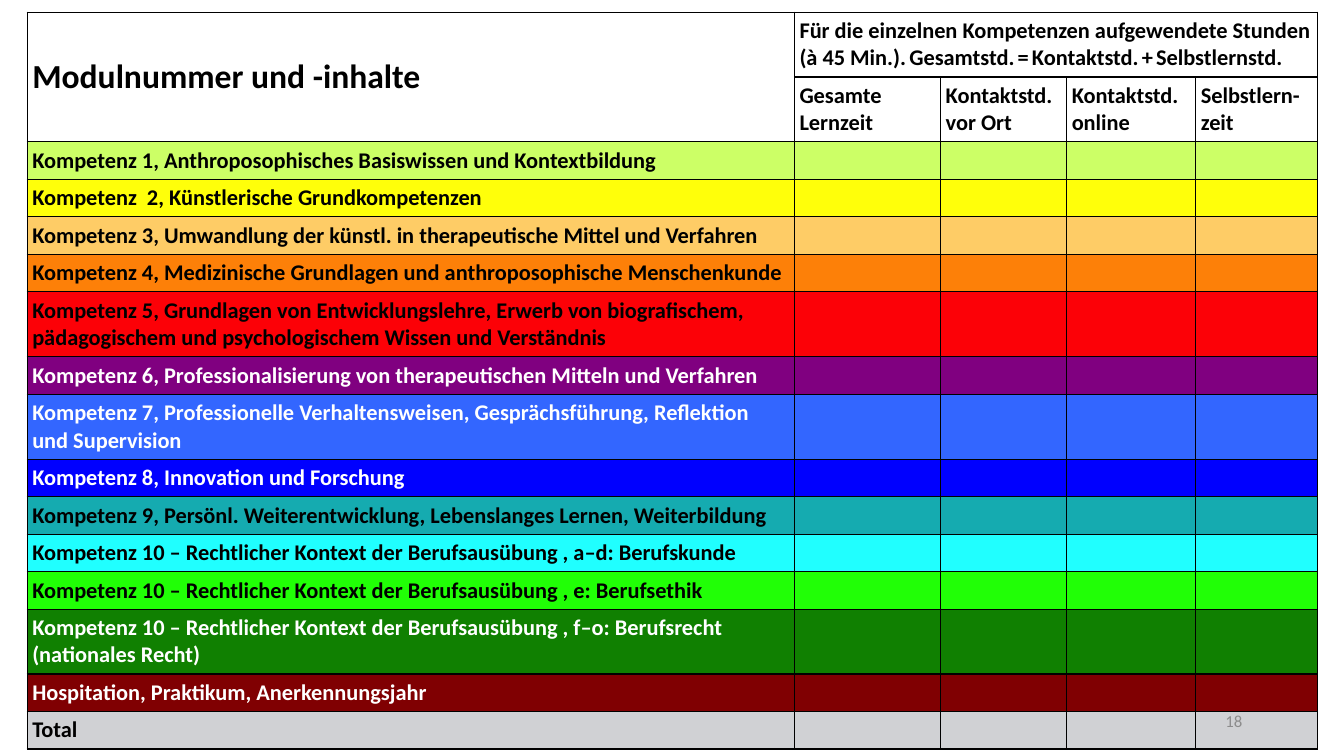
"""Build the slide with the table of competences and learning hours."""
from dataclasses import dataclass

from lxml.etree import SubElement
from pptx import Presentation
from pptx.dml.color import RGBColor
from pptx.enum.text import MSO_ANCHOR, PP_ALIGN
from pptx.oxml.ns import qn
from pptx.util import Inches, Pt

COLORS = {
    "black": "000000", "white": "FFFFFF", "number": "8C8C8C",
    "lime": "CCFF66", "yellow": "FFFF0A", "sand": "FECC66", "orange": "FD8008",
    "red": "FC0107", "purple": "800080", "sky": "3366FF", "blue": "0000FF",
    "teal": "15ABB0", "cyan": "20FFFF", "green": "21FF06", "forest": "108001",
    "maroon": "800002", "grey": "D0D1D4",
}
COL_WIDTHS = [7.61, 1.45, 1.25, 1.28, 1.21]
ONE_LINE, TWO_LINES = 0.37, 0.64
HOURS_TITLE = ["Für die einzelnen Kompetenzen aufgewendete Stunden", "(à 45 Min.).",
               "Gesamtstd.", "=", "Kontaktstd.", "+", "Selbstlernstd."]
HOURS_COLUMNS = ["Gesamte Lernzeit", "Kontaktstd. vor Ort", "Kontaktstd. online",
                 "Selbstlern-zeit"]


@dataclass
class Module:
    """A coloured table row."""
    text: str
    fill: str
    color: str = "black"
    height: float = ONE_LINE


MODULES = [
    Module("Kompetenz 1, Anthroposophisches Basiswissen und Kontextbildung", "lime"),
    Module("Kompetenz  2, Künstlerische Grundkompetenzen", "yellow"),
    Module("Kompetenz 3, Umwandlung der künstl. in therapeutische Mittel und Verfahren",
           "sand"),
    Module("Kompetenz 4, Medizinische Grundlagen und anthroposophische Menschenkunde",
           "orange"),
    Module("Kompetenz 5, Grundlagen von Entwicklungslehre, Erwerb von biografischem, "
           "pädagogischem und psychologischem Wissen und Verständnis",
           "red", height=TWO_LINES),
    Module("Kompetenz 6, Professionalisierung von therapeutischen Mitteln und Verfahren",
           "purple", "white"),
    Module("Kompetenz 7, Professionelle Verhaltensweisen, Gesprächsführung, Reflektion "
           "und Supervision", "sky", "white", TWO_LINES),
    Module("Kompetenz 8, Innovation und Forschung", "blue", "white"),
    Module("Kompetenz 9, Persönl. Weiterentwicklung, Lebenslanges Lernen, Weiterbildung",
           "teal"),
    Module("Kompetenz 10 – Rechtlicher Kontext der Berufsausübung , a–d: Berufskunde",
           "cyan"),
    Module("Kompetenz 10 – Rechtlicher Kontext der Berufsausübung , e: Berufsethik",
           "green"),
    Module("Kompetenz 10 – Rechtlicher Kontext der Berufsausübung , f–o: Berufsrecht "
           "(nationales Recht)", "forest", "white", TWO_LINES),
    Module("Hospitation, Praktikum, Anerkennungsjahr", "maroon", "white"),
    Module("Total", "grey"),
]


def rgb(name: str) -> RGBColor:
    """Return a named colour."""
    return RGBColor.from_string(COLORS[name])


def add_text(p, text: str, *, size: float = 16, color: str = "black",
             bold: bool = True) -> None:
    """Append a formatted run to a paragraph."""
    r = p.add_run()
    r.text = text
    r.font.name = "Calibri"
    r.font.size = Pt(size)
    r.font.bold = bold
    r.font.color.rgb = rgb(color)


def format_cell(cell, fill: str, margin: float) -> None:
    """Set borders, fill and margins of a cell."""
    tc_pr = cell._tc.get_or_add_tcPr()
    for side in ("lnL", "lnR", "lnT", "lnB"):
        ln = SubElement(tc_pr, qn(f"a:{side}"), w=str(Pt(1)))
        solid = SubElement(ln, qn("a:solidFill"))
        SubElement(solid, qn("a:srgbClr"), val=COLORS["black"])
    cell.fill.solid()
    cell.fill.fore_color.rgb = rgb(fill)
    cell.margin_left = cell.margin_right = Inches(0.05)
    cell.margin_top = cell.margin_bottom = Inches(margin)


def add_header(table) -> None:
    """Fill the two header rows."""
    title, hours = table.cell(0, 0), table.cell(0, 1)
    title.merge(table.cell(1, 0))
    title.vertical_anchor = MSO_ANCHOR.MIDDLE
    add_text(title.text_frame.paragraphs[0], "Modulnummer und -inhalte", size=24)
    hours.merge(table.cell(0, len(COL_WIDTHS) - 1))
    p = hours.text_frame.paragraphs[0]
    for i, part in enumerate(HOURS_TITLE):
        if i:
            add_text(p, " ", size=10)
        add_text(p, part)
    for col, text in enumerate(HOURS_COLUMNS, 1):
        add_text(table.cell(1, col).text_frame.paragraphs[0], text)


def add_hours_table(s) -> None:
    """Add the table of modules and hours."""
    heights = [TWO_LINES, TWO_LINES] + [m.height for m in MODULES]
    fills = ["white", "white"] + [m.fill for m in MODULES]
    table = s.shapes.add_table(len(heights), len(COL_WIDTHS), Inches(0.27), Inches(0.12),
                               Inches(sum(COL_WIDTHS)), Inches(sum(heights))).table
    table.first_row = table.horz_banding = False
    for column, width in zip(table.columns, COL_WIDTHS):
        column.width = Inches(width)
    for i, (row, height, fill) in enumerate(zip(table.rows, heights, fills)):
        row.height = Inches(height)
        for col, cell in enumerate(row.cells):
            format_cell(cell, fill, 0.05 if i < 2 or col == 0 else 0.02)
    add_header(table)
    for i, m in enumerate(MODULES, 2):
        add_text(table.cell(i, 0).text_frame.paragraphs[0], m.text, color=m.color)


def add_page_number(s) -> None:
    """Add the page number over the table."""
    tf = s.shapes.add_textbox(Inches(9.42), Inches(6.95), Inches(3), Inches(0.4)).text_frame
    tf.word_wrap = True
    tf.vertical_anchor = MSO_ANCHOR.MIDDLE
    p = tf.paragraphs[0]
    p.alignment = PP_ALIGN.RIGHT
    add_text(p, "18", size=12, color="number", bold=False)


def main() -> None:
    """Build and save the presentation."""
    prs = Presentation()
    prs.slide_width, prs.slide_height = Inches(13.33), Inches(7.5)
    s = prs.slides.add_slide(prs.slide_layouts[6])
    add_hours_table(s)
    add_page_number(s)
    prs.save("out.pptx")


if __name__ == "__main__":
    main()
